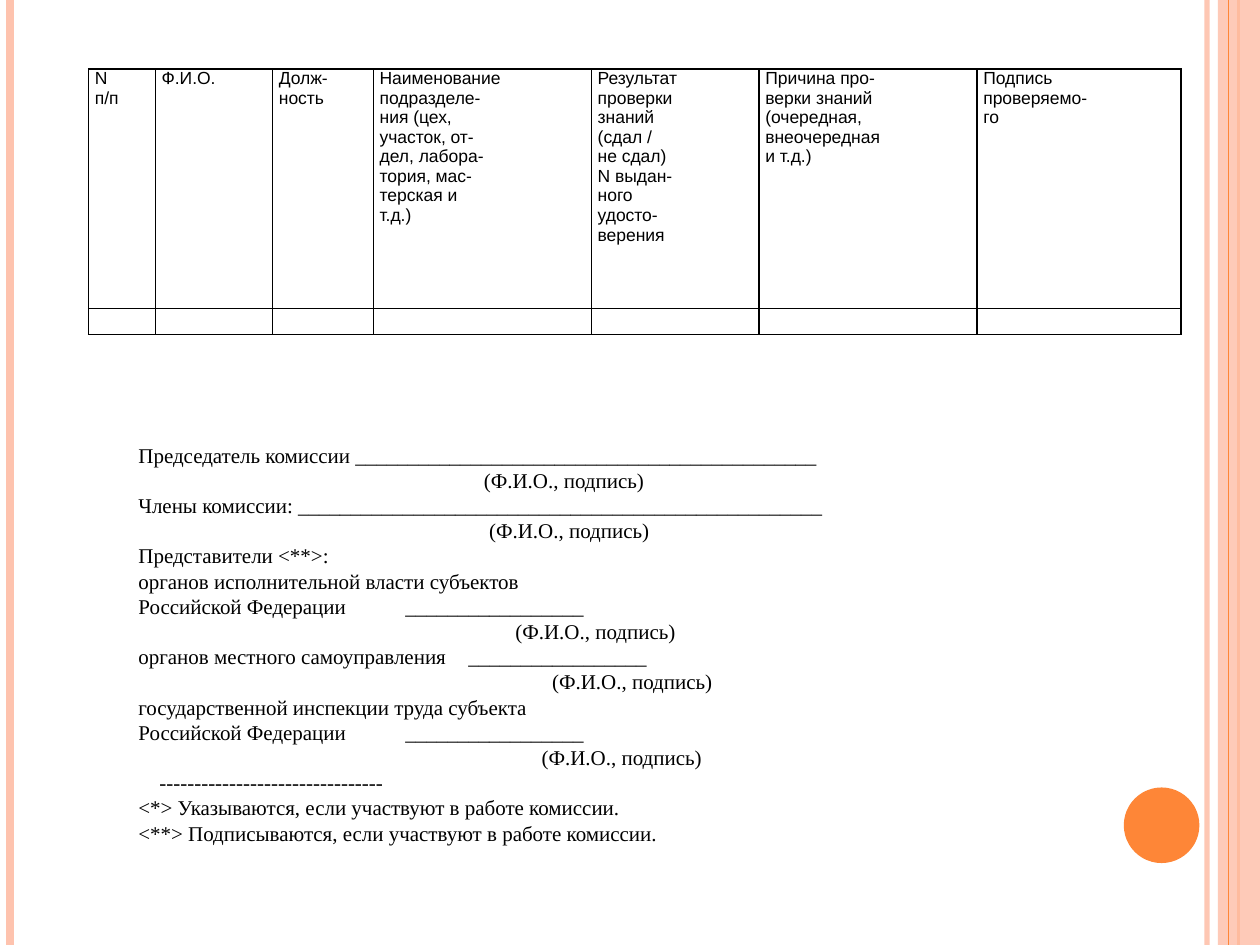
from dataclasses import dataclass

from lxml.etree import SubElement
from pptx import Presentation
from pptx.dml.color import RGBColor as Color
from pptx.enum.shapes import MSO_CONNECTOR as Connector, MSO_SHAPE as Shape
from pptx.enum.text import MSO_ANCHOR as Anchor
from pptx.oxml import parse_xml
from pptx.oxml.ns import nsdecls, qn
from pptx.util import Pt


@dataclass(frozen=True)
class Theme:
    ink: str = "000000"
    orange: str = "FE8637"
    peach: str = "FEC3AE"
    table_font: str = "Arial"
    form_font: str = "Times New Roman"
    table_size: int = 10
    form_size: int = 12


theme = Theme()


def set_alpha(fill_parent, percent):
    color = next(fill_parent.iter(qn("a:srgbClr")))
    SubElement(color, qn("a:alpha")).set("val", str(percent * 1000))


def add_span(para, text, font, size):
    span = para.add_run()
    span.text = text
    span.font.name = font
    span.font.size = Pt(size)
    span.font.color.rgb = Color.from_string(theme.ink)


deck = Presentation()
deck.slide_width, deck.slide_height = Pt(720), Pt(540)
page = deck.slides.add_slide(deck.slide_layouts[6])

# Side decoration, back to front: (shape, left, top, width, height, colour, alpha)
# or (line, x, weight, colour, alpha)
decoration = [
    ("line", 689.8, 3, theme.peach, 93),
    ("line", 5.9, 4.5, theme.peach, 100),
    ("line", 707.8, 1.5, theme.orange, 100),
    (Shape.RECTANGLE, 696, 0, 24, 540, theme.peach, 87),
    ("line", 702, 0.75, theme.orange, 100),
    (Shape.OVAL, 642.2, 450, 43.2, 43.2, theme.orange, 100),
]
for kind, *geometry, color, alpha in decoration:
    if kind == "line":
        x, weight = geometry
        item = page.shapes.add_connector(
            Connector.STRAIGHT, Pt(x), Pt(0), Pt(x), Pt(540))
        item.line.color.rgb = Color.from_string(color)
        item.line.width = Pt(weight)
        SubElement(item._element.spPr, qn("a:effectLst"))
    else:
        item = page.shapes.add_shape(kind, *map(Pt, geometry))
        item.shadow.inherit = False
        item.fill.solid()
        item.fill.fore_color.rgb = Color.from_string(color)
        item.line.fill.background()
    if alpha < 100:
        set_alpha(item._element.spPr, alpha)

# Knowledge check table
columns = [
    (38.2, "N\nп/п"),
    (67, "Ф.И.О."),
    (57.6, "Долж-\nность"),
    (124.6, "Наименование\nподразделе-\nния (цех,\nучасток, от-\nдел, лабора-\n"
            "тория, мас-\nтерская и\nт.д.)"),
    (95.8, "Результат\nпроверки\nзнаний\n(сдал /\nне сдал)\nN выдан-\nного\n"
           "удосто-\nверения"),
    (124.6, "Причина про-\nверки знаний\n(очередная,\nвнеочередная\nи т.д.)"),
    (116.6, "Подпись\nпроверяемо-\nго"),
]
row_heights = [136.8, 15.1]
table = page.shapes.add_table(
    len(row_heights), len(columns), Pt(50.6), Pt(39.4),
    Pt(sum(width for width, _ in columns)), Pt(sum(row_heights))).table
table.first_row = table.horz_banding = False
for row, height in zip(table.rows, row_heights):
    row.height = Pt(height)

for index, (width, heading) in enumerate(columns):
    table.columns[index].width = Pt(width)
    para = table.cell(0, index).text_frame.paragraphs[0]
    for number, text in enumerate(heading.split("\n")):
        if number:
            para.add_line_break()
        add_span(para, text, theme.table_font, theme.table_size)
    for line_break in para._p.findall(qn("a:br")):
        SubElement(line_break, qn("a:rPr")).set("sz", str(theme.table_size * 100))
    empty = table.cell(1, index).text_frame.paragraphs[0]
    SubElement(empty._p, qn("a:endParaRPr")).set("sz", str(theme.table_size * 100))

for cell in table.iter_cells():
    cell.margin_left = cell.margin_right = Pt(3.6)
    cell.margin_top = cell.margin_bottom = Pt(0)
    cell.fill.background()
    properties = cell._tc.get_or_add_tcPr()
    for position, side in enumerate(("lnL", "lnR", "lnT", "lnB")):
        properties.insert(position, parse_xml(
            f'<a:{side} {nsdecls("a")} w="{Pt(1)}"><a:solidFill>'
            f'<a:srgbClr val="{theme.ink}"/></a:solidFill></a:{side}>'))

# Signature form: (first line indent, text, tab stop for the blank to sign on)
margin = 27.4
signature = "(Ф.И.О., подпись)"
blank = "_" * 17
form_lines = [
    (margin, "Председатель комиссии " + "_" * 44, None),
    (224.8, signature, None),
    (margin, "Члены комиссии: " + "_" * 50, None),
    (227.8, signature, None),
    (margin, "Представители <**>:", None),
    (margin, "органов исполнительной власти субъектов", None),
    (margin, "Российской Федерации\t" + blank, 232.7),
    (242.8, signature, None),
    (margin, "органов местного самоуправления\t" + blank, 256.7),
    (263.8, signature, None),
    (margin, "государственной инспекции труда субъекта", None),
    (margin, "Российской Федерации\t" + blank, 232.7),
    (257.8, signature, None),
    (39.4, "-" * 32, None),
    (margin, "<*> Указываются, если участвуют в работе комиссии.", None),
    (margin, "<**> Подписываются, если участвуют в работе комиссии.", None),
]
form = page.shapes.add_textbox(Pt(44.6), Pt(247.7), Pt(450), Pt(273.6)).text_frame
form.word_wrap = True
form.vertical_anchor = Anchor.TOP
form.margin_top = Pt(5)
for number, (indent, text, tab_stop) in enumerate(form_lines):
    para = form.add_paragraph() if number else form.paragraphs[0]
    properties = para._p.get_or_add_pPr()
    properties.set("marL", "0")
    properties.set("indent", str(Pt(indent)))
    if tab_stop:
        tabs = SubElement(properties, qn("a:tabLst"))
        tab = SubElement(tabs, qn("a:tab"))
        tab.set("pos", str(Pt(tab_stop)))
        tab.set("algn", "l")
    add_span(para, text, theme.form_font, theme.form_size)

deck.save("out.pptx")
